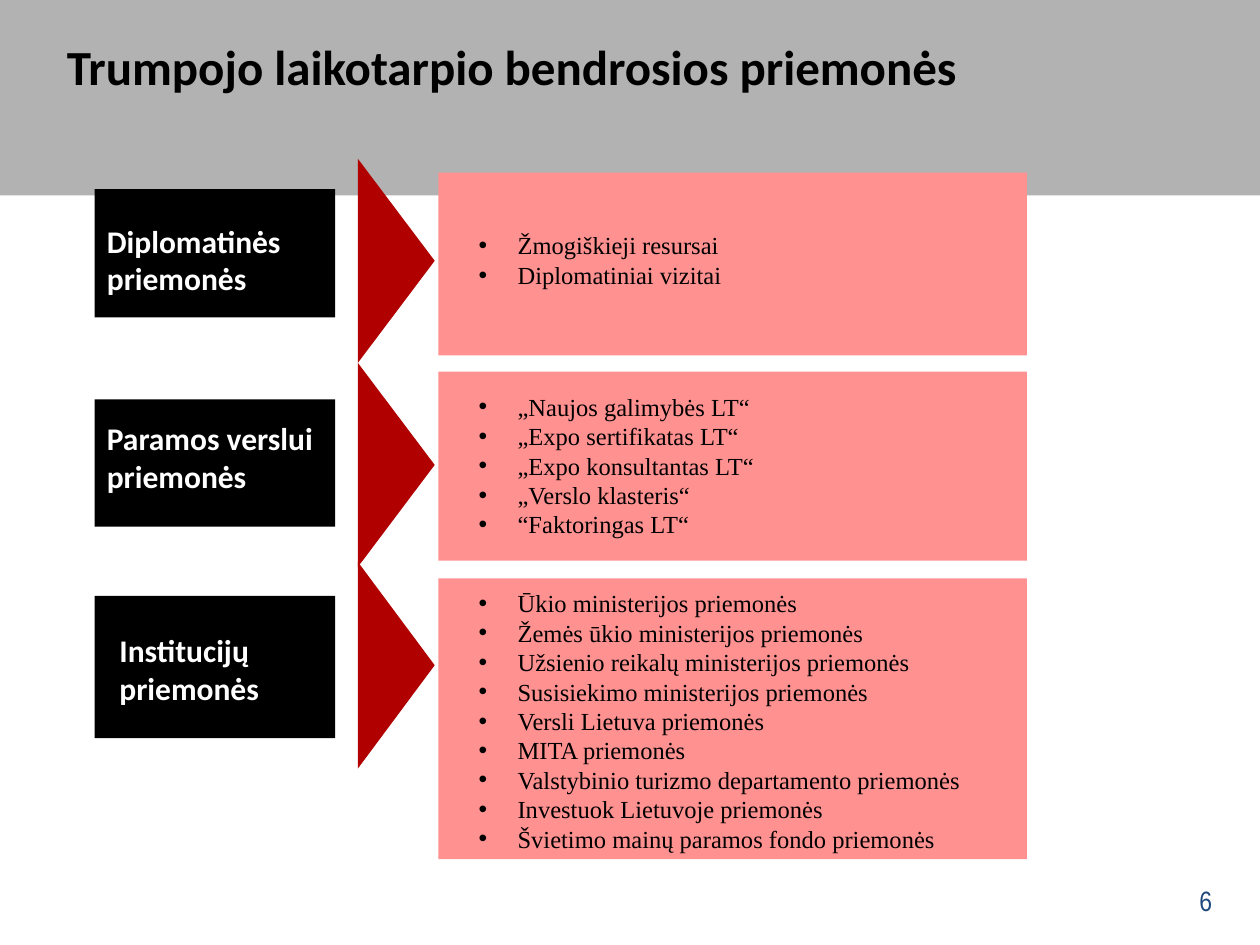
import lxml.etree
import pptx
import pptx.dml.color
import pptx.enum.shapes
import pptx.enum.text
import pptx.oxml.ns
import pptx.util

COLORS = {
    "band": "B2B2B2",
    "panel": "FF9191",
    "arrow": "B00000",
    "label": "000000",
    "label_text": "FFFFFF",
    "text": "000000",
    "number": "1F497D",
}
SHAPES = pptx.enum.shapes.MSO_SHAPE

presentation = pptx.Presentation()
presentation.slide_width = pptx.util.Inches(10)
presentation.slide_height = pptx.util.Inches(7.5)
column = presentation.slide_width / 100
row = presentation.slide_height / 75

slide = presentation.slides.add_slide(presentation.slide_layouts[5])


def add_block(kind, color, left, top, width, height):
    shape = slide.shapes.add_shape(
        kind, int(left * column), int(top * row), int(width * column), int(height * row)
    )
    shape.shadow.inherit = False
    shape.fill.solid()
    shape.fill.fore_color.rgb = pptx.dml.color.RGBColor.from_string(COLORS[color])
    shape.line.fill.background()
    return shape


def write_text(shape, lines, place, font_name, size, color, bold=False, bullets=False):
    left, top, width, height = place
    shape.left, shape.width = int(left * column), int(width * column)
    shape.top, shape.height = int(top * row), int(height * row)
    frame = shape.text_frame
    frame.word_wrap = True
    frame.auto_size = pptx.enum.text.MSO_AUTO_SIZE.NONE
    frame.vertical_anchor = pptx.enum.text.MSO_ANCHOR.TOP
    frame.text = "\n".join(lines)
    for paragraph in frame.paragraphs:
        paragraph.alignment = pptx.enum.text.PP_ALIGN.LEFT
        if bullets:
            properties = paragraph._p.get_or_add_pPr()
            indent = int(3.1 * column)
            properties.set("marL", str(indent))
            properties.set("indent", str(-indent))
            for tag, name, value in (("a:buFont", "typeface", "Arial"), ("a:buChar", "char", "•")):
                bullet = lxml.etree.SubElement(properties, pptx.oxml.ns.qn(tag))
                bullet.set(name, value)
        paragraph.font.name = font_name
        paragraph.font.size = pptx.util.Pt(size)
        paragraph.font.bold = bold
        paragraph.font.color.rgb = pptx.dml.color.RGBColor.from_string(COLORS[color])


title = slide.shapes.title
band = add_block(SHAPES.RECTANGLE, "band", 0, 0, 100, 15.5)
title._element.addprevious(band._element)
write_text(title, ["Trumpojo laikotarpio bendrosios priemonės"],
           (4.3, 2.4, 78.8, 5.7), "Calibri", 28, "text", bold=True)

measures = [
    {
        "label": "Diplomatinės priemonės",
        "label_block": (15, 10.2), "label_text": (7.5, 17.1, 20.8, 6.1),
        "arrow": (12.6, 16.2), "panel": (13.7, 14.5), "list": (17.8, 8.1),
        "items": ["Žmogiškieji resursai", "Diplomatiniai vizitai"],
    },
    {
        "label": "Paramos verslui priemonės",
        "label_block": (31.7, 10.1), "label_text": (7.5, 32.8, 21.6, 7.1),
        "arrow": (28.8, 16.2), "panel": (29.5, 15), "list": (30.6, 12.8),
        "items": [
            "„Naujos galimybės LT“",
            "„Expo sertifikatas LT“",
            "„Expo konsultantas LT“",
            "„Verslo klasteris“",
            "“Faktoringas LT“",
        ],
    },
    {
        "label": "Institucijų priemonės",
        "label_block": (47.3, 11.3), "label_text": (8.5, 49.6, 17, 6.1),
        "arrow": (44.6, 16.4), "panel": (45.9, 22.3), "list": (46.2, 28),
        "items": [
            "Ūkio ministerijos priemonės",
            "Žemės ūkio ministerijos priemonės",
            "Užsienio reikalų ministerijos priemonės",
            "Susisiekimo ministerijos priemonės",
            "Versli Lietuva priemonės",
            "MITA priemonės",
            "Valstybinio turizmo departamento priemonės",
            "Investuok Lietuvoje priemonės",
            "Švietimo mainų paramos fondo priemonės",
        ],
    },
]

for measure in measures:
    for part, kind, color, left, width in (
        ("panel", SHAPES.RECTANGLE, "panel", 34.8, 46.7),
        ("label_block", SHAPES.RECTANGLE, "label", 7.5, 19.1),
        ("arrow", SHAPES.RIGHT_ARROW, "arrow", 28.4, 6.1),
    ):
        top, height = measure[part]
        block = add_block(kind, color, left, top, width, height)
        if part == "arrow":
            block.adjustments[0], block.adjustments[1] = 0.5, 1

    label = slide.shapes.add_textbox(0, 0, 0, 0)
    write_text(label, [measure["label"]], measure["label_text"],
               "Calibri", 18, "label_text", bold=True)
    top, height = measure["list"]
    item_list = slide.shapes.add_textbox(0, 0, 0, 0)
    write_text(item_list, measure["items"], (37, top, 43.7, height),
               "Times New Roman", 14, "text", bullets=True)

number = slide.shapes.add_textbox(0, 0, 0, 0)
write_text(number, ["6"], (94.2, 69.6, 4.2, 3.7), "Arial Narrow", 16, "number")

presentation.save("out.pptx")
